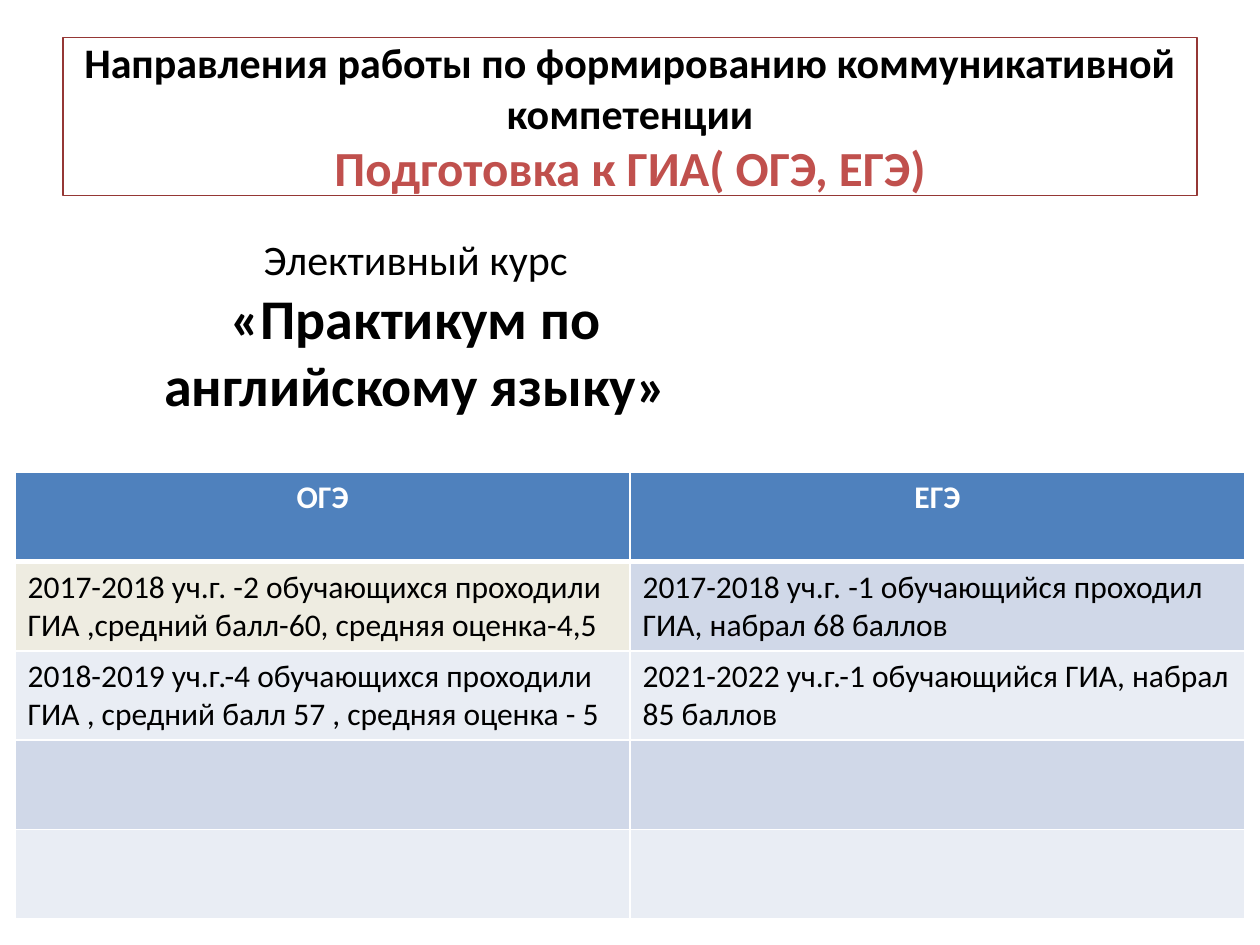
from dataclasses import dataclass

from lxml.etree import SubElement
from pptx import Presentation
from pptx.dml.color import RGBColor
from pptx.enum.shapes import MSO_SHAPE
from pptx.enum.text import MSO_ANCHOR, PP_ALIGN
from pptx.oxml.ns import qn
from pptx.util import Emu, Inches, Pt

FONT = "Calibri"
BLACK, WHITE, RED, DARK_RED = "000000", "FFFFFF", "C0504D", "953735"
HEADER, BAND_DARK, BAND_LIGHT, CREAM = "4F81BD", "D0D8E8", "E9EDF4", "EEECE1"
WIDTH, HEIGHT = Inches(10), Inches(7.5)


@dataclass
class Box:
    """Left, top, width and height as shares of the slide."""
    left: float
    top: float
    width: float
    height: float

    def lengths(self) -> tuple:
        return (Emu(int(self.left * WIDTH)), Emu(int(self.top * HEIGHT)),
                Emu(int(self.width * WIDTH)), Emu(int(self.height * HEIGHT)))


@dataclass
class Words:
    text: str
    size: int
    color: str = BLACK
    bold: bool = False


@dataclass
class Cell:
    text: str
    fill: str


def rgb(color: str) -> RGBColor:
    return RGBColor.from_string(color)


def add_words(paragraph, words: Words) -> None:
    run = paragraph.add_run()
    run.text = words.text
    run.font.name = FONT
    run.font.size = Pt(words.size)
    run.font.bold = words.bold
    run.font.color.rgb = rgb(words.color)


def add_border(cell, side: str, points: float) -> None:
    line = SubElement(cell._tc.get_or_add_tcPr(), qn(f"a:ln{side}"), w=str(Pt(points)))
    solid = SubElement(line, qn("a:solidFill"))
    SubElement(solid, qn("a:srgbClr"), val=WHITE)


def draw_title(slide, box: Box, lines: list[Words]) -> None:
    title = slide.shapes.add_shape(MSO_SHAPE.RECTANGLE, *box.lengths())
    title.shadow.inherit = False
    title.fill.background()
    title.line.color.rgb = rgb(DARK_RED)
    title.line.width = Pt(0.75)
    frame = title.text_frame
    frame.word_wrap = True
    frame.vertical_anchor = MSO_ANCHOR.MIDDLE
    paragraph = frame.paragraphs[0]
    paragraph.alignment = PP_ALIGN.CENTER
    for number, words in enumerate(lines):
        if number:
            paragraph.add_line_break()
        add_words(paragraph, words)


def draw_course(slide, box: Box, lines: list[Words]) -> None:
    frame = slide.shapes.add_textbox(*box.lengths()).text_frame
    frame.word_wrap = True
    for number, words in enumerate(lines):
        paragraph = frame.add_paragraph() if number else frame.paragraphs[0]
        paragraph.alignment = PP_ALIGN.CENTER
        add_words(paragraph, words)


def draw_results(slide, box: Box, rows: list[list[Cell]]) -> None:
    table = slide.shapes.add_table(len(rows), len(rows[0]), *box.lengths()).table
    for r, row in enumerate(rows):
        is_header = r == 0
        # A thick rule parts the header from the body
        borders = {"L": 1, "R": 1, "T": 3 if r == 1 else 1, "B": 3 if is_header else 1}
        for c, content in enumerate(row):
            cell = table.cell(r, c)
            for side, points in borders.items():
                add_border(cell, side, points)
            cell.fill.solid()
            cell.fill.fore_color.rgb = rgb(content.fill)
            paragraph = cell.text_frame.paragraphs[0]
            if is_header:
                paragraph.alignment = PP_ALIGN.CENTER
            if content.text:
                color = WHITE if is_header else BLACK
                add_words(paragraph, Words(content.text, 18, color, is_header))


TITLE = [
    Words("Направления работы по формированию коммуникативной компетенции", 24, bold=True),
    Words("Подготовка к ГИА( ОГЭ, ЕГЭ)", 28, RED, True),
]
COURSE = [
    Words("Элективный курс", 24),
    Words("«Практикум по английскому языку»", 32, bold=True),
]
RESULTS = [
    [Cell("ОГЭ", HEADER), Cell("ЕГЭ", HEADER)],
    [Cell("2017-2018 уч.г. -2 обучающихся проходили ГИА ,средний балл-60, "
          "средняя оценка-4,5", CREAM),
     Cell("2017-2018 уч.г. -1 обучающийся проходил ГИА, набрал 68 баллов", BAND_DARK)],
    [Cell("2018-2019 уч.г.-4 обучающихся проходили ГИА , средний балл 57 , "
          "средняя оценка - 5", BAND_LIGHT),
     Cell("2021-2022 уч.г.-1 обучающийся ГИА, набрал 85 баллов", BAND_LIGHT)],
    [Cell("", BAND_DARK)] * 2,
    [Cell("", BAND_LIGHT)] * 2,
]


def main() -> None:
    deck = Presentation()
    deck.slide_width, deck.slide_height = WIDTH, HEIGHT
    slide = deck.slides.add_slide(deck.slide_layouts[6])
    # Course name, framed title, exam results
    draw_course(slide, Box(0.06, 0.24, 0.54, 0.21), COURSE)
    draw_title(slide, Box(0.05, 0.04, 0.9, 1 / 6), TITLE)
    draw_results(slide, Box(0.012, 0.5, 0.976, 0.472), RESULTS)
    deck.save("out.pptx")


if __name__ == "__main__":
    main()
